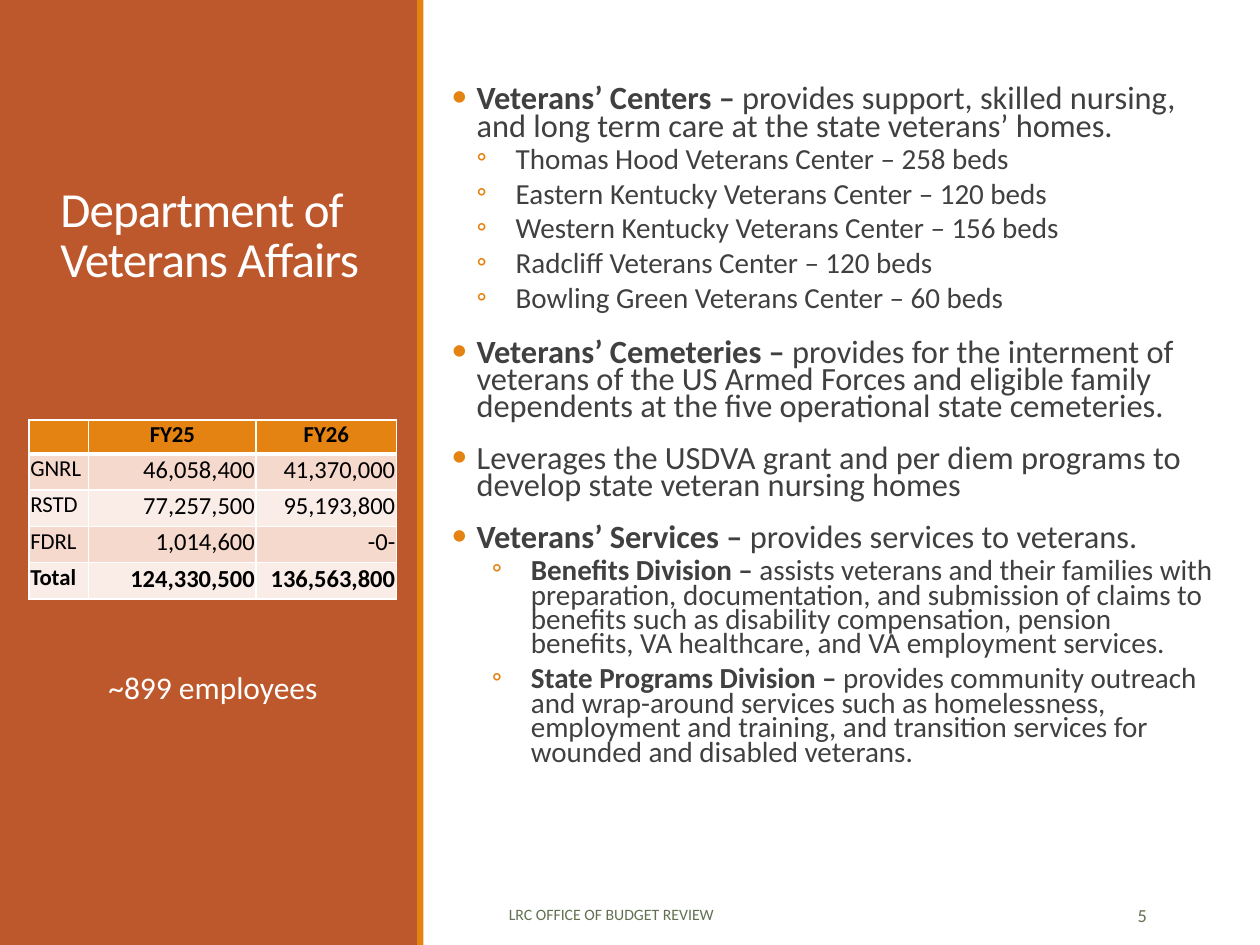
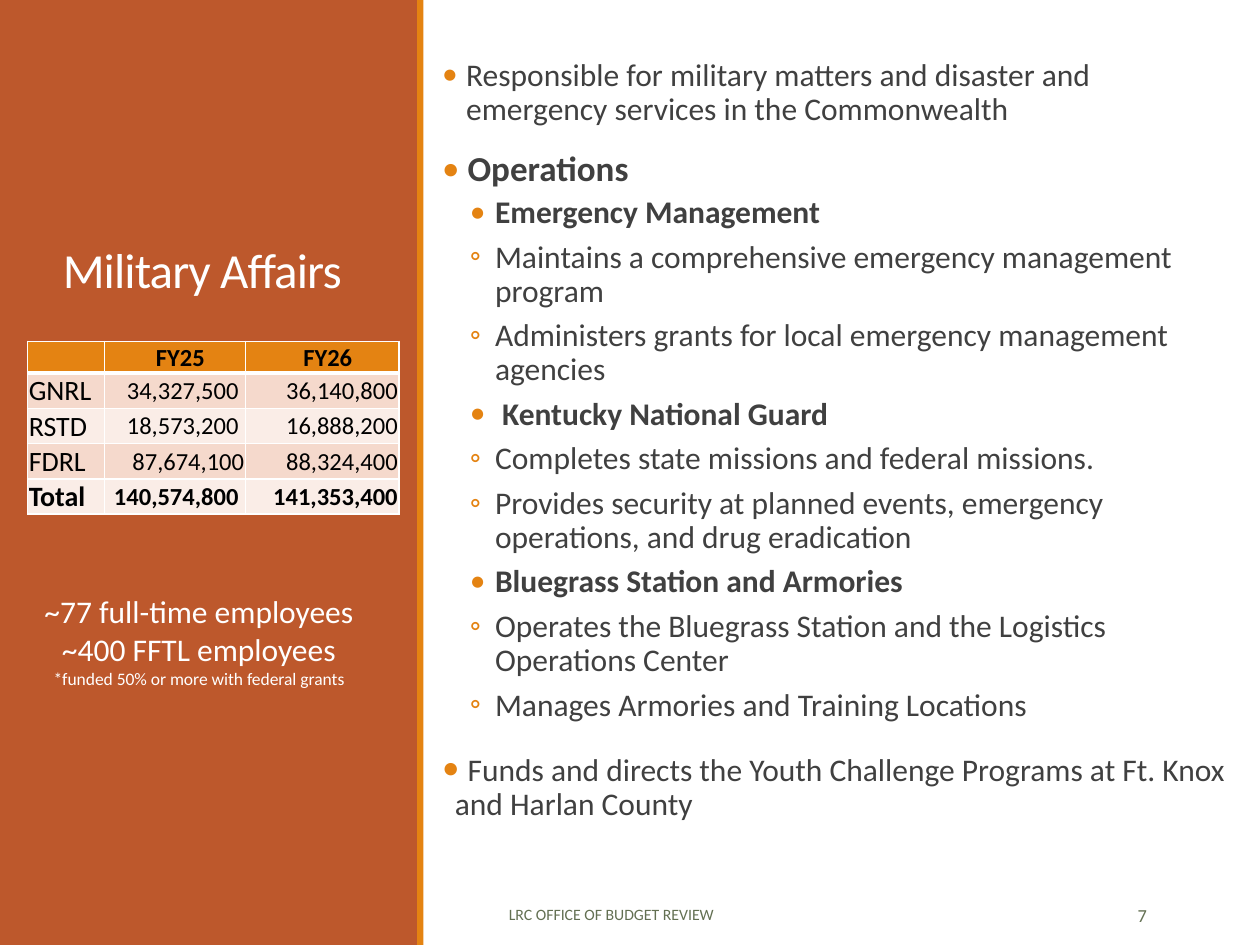
from dataclasses import dataclass

from lxml.etree import SubElement
from pptx import Presentation
from pptx.dml.color import RGBColor
from pptx.enum.shapes import MSO_SHAPE as Shape
from pptx.enum.text import MSO_ANCHOR as Anchor, PP_ALIGN as Align
from pptx.oxml import parse_xml
from pptx.oxml.ns import nsdecls, qn
from pptx.util import Pt

COLORS = {
    "panel": "BD582C", "accent": "E48312", "white": "FFFFFF", "black": "000000",
    "body": "404040", "footer": "637052", "odd row": "F5D9CC", "even row": "FAEDE7",
}
FONT = "Calibri"
FOOTER = "LRC OFFICE OF BUDGET REVIEW"


@dataclass
class Bullet:
    """Paragraph style; the bold lead may have its own size."""
    size: float
    left: float
    hang: float
    mark: str = "◦"
    level: int = 1
    before: float = 2
    after: float = 4
    lead_size: float = 0


def top_bullet(size, indent, lead_size=0):
    return Bullet(size, indent, indent, "•", 0, 12, 2, lead_size)


def rgb(name):
    return RGBColor.from_string(COLORS[name])


def write(para, text, size, color="white", bold=False, tracking=0):
    span = para.add_run()
    span.text = text
    span.font.name = FONT
    span.font.size = Pt(size)
    span.font.bold = bold
    span.font.color.rgb = rgb(color)
    if tracking:
        span._r.get_or_add_rPr().set("spc", str(int(tracking * 100)))


def set_bullet(para, bullet):
    props = para._p.get_or_add_pPr()
    props.set("marL", str(Pt(bullet.left)))
    props.set("indent", str(-Pt(bullet.hang)))
    color = SubElement(props, qn("a:buClr"))
    SubElement(color, qn("a:srgbClr"), val=COLORS["accent"])
    SubElement(props, qn("a:buFont"), typeface=FONT)
    SubElement(props, qn("a:buChar"), char=bullet.mark)


def set_borders(cell, top=1, bottom=1):
    props = cell._tc.get_or_add_tcPr()
    sides = {"lnL": 1, "lnR": 1, "lnT": top, "lnB": bottom}
    for place, (side, width) in enumerate(sides.items()):
        props.insert(place, parse_xml(
            f'<a:{side} {nsdecls("a")} w="{Pt(width)}"><a:solidFill>'
            f'<a:srgbClr val="{COLORS["white"]}"/></a:solidFill></a:{side}>'))


class BudgetDeck:
    def __init__(self):
        self.deck = Presentation()
        self.deck.slide_width, self.deck.slide_height = Pt(720), Pt(540)
        self.page = None

    def new_page(self, number):
        """Start a slide with the side panel, footer and slide number."""
        self.page = self.deck.slides.add_slide(self.deck.slide_layouts[6])
        self.band(0, 239, "panel")
        self.band(238.3, 3.7, "accent")
        for text, left, width, size, align in (
                (FOOTER, 283.7, 274.3, 9, Align.LEFT),
                (str(number), 584.6, 77.8, 10.5, Align.RIGHT)):
            frame = self.text_frame(left, 508.3, width, 28.8, Anchor.MIDDLE)
            para = frame.paragraphs[0]
            para.alignment = align
            write(para, text, size, "footer")

    def band(self, left, width, color):
        bar = self.page.shapes.add_shape(
            Shape.RECTANGLE, Pt(left), 0, Pt(width), self.deck.slide_height)
        bar.shadow.inherit = False
        bar.fill.solid()
        bar.fill.fore_color.rgb = rgb(color)
        bar.line.fill.background()

    def text_frame(self, left, top, width, height, anchor=Anchor.TOP):
        box = self.page.shapes.add_textbox(Pt(left), Pt(top), Pt(width), Pt(height))
        frame = box.text_frame
        frame.word_wrap = True
        frame.vertical_anchor = anchor
        return frame

    def title(self, text, left, height):
        frame = self.text_frame(left, 46.8, 188.6, height, Anchor.BOTTOM)
        para = frame.paragraphs[0]
        para.line_spacing = 0.85
        write(para, text, 28, tracking=-0.5)

    def staff_note(self, lines, left, top, width, height):
        frame = self.text_frame(left, top, width, height)
        for index, (text, size) in enumerate(lines):
            para = frame.add_paragraph() if index else frame.paragraphs[0]
            para.alignment = Align.CENTER
            write(para, text, size)

    def bullets(self, items, left, top, width, height, spacing):
        """Each item is (style, bold lead, plain rest)."""
        frame = self.text_frame(left, top, width, height)
        frame.margin_left = frame.margin_right = 0
        for index, (style, lead, rest) in enumerate(items):
            para = frame.add_paragraph() if index else frame.paragraphs[0]
            para.level = style.level
            para.line_spacing = spacing
            para.space_before, para.space_after = Pt(style.before), Pt(style.after)
            set_bullet(para, style)
            if lead:
                write(para, lead, style.lead_size or style.size, "body",
                      bold=bool(lead.strip()))
            if rest:
                write(para, rest, style.size, "body")

    def budget_table(self, rows, left, top, widths, heights, header_size,
                     label_size, anchor, header_shift=0):
        head_height, row_height = heights
        table = self.page.shapes.add_table(
            len(rows) + 1, len(widths), Pt(left), Pt(top), Pt(sum(widths)),
            Pt(head_height + row_height * len(rows))).table
        table.first_row = table.horz_banding = False
        for column, width in zip(table.columns, widths):
            column.width = Pt(width)
        for r, values in enumerate([("", "FY25", "FY26"), *rows]):
            header = r == 0
            table.rows[r].height = Pt(head_height if header else row_height)
            fill = "accent" if header else "odd row" if r % 2 else "even row"
            for c, text in enumerate(values):
                cell = table.cell(r, c)
                cell.margin_left = Pt(0.7 + header_shift * header)
                cell.margin_right = cell.margin_top = Pt(0.7)
                cell.margin_bottom = 0
                cell.vertical_anchor = anchor
                cell.fill.solid()
                cell.fill.fore_color.rgb = rgb(fill)
                set_borders(cell, top=3 if r == 1 else 1, bottom=3 if header else 1)
                size = header_size if header else 14 if c else label_size
                para = cell.text_frame.paragraphs[0]
                if not text:
                    SubElement(para._p, qn("a:endParaRPr"), sz=str(size * 100))
                    continue
                para.alignment = (Align.CENTER if header
                                  else Align.RIGHT if c else Align.LEFT)
                write(para, text, size, "black", bold=header or r == len(rows))


def veterans_page(deck):
    deck.new_page(5)
    deck.title("Department of Veterans Affairs", 27.4, 121)
    main = top_bullet(18.5, 14.4)
    center = Bullet(16.6, 36.7, 22.3, level=2)
    division = Bullet(16.6, 45.4, 22.3)
    centers = {"Thomas Hood": 258, "Eastern Kentucky": 120, "Western Kentucky": 156,
               "Radcliff": 120, "Bowling Green": 60}
    deck.bullets([
        (main, "Veterans’ Centers – ", "provides support, skilled nursing, and long "
         "term care at the state veterans’ homes."),
        *((center, "", f"{name} Veterans Center – {beds} beds")
          for name, beds in centers.items()),
        (main, "Veterans’ Cemeteries – ", "provides for the interment of veterans of "
         "the US Armed Forces and eligible family dependents at the five operational "
         "state cemeteries."),
        (main, "", "Leverages the USDVA grant and per diem programs to develop state "
         "veteran nursing homes"),
        (main, "Veterans’ Services – ", "provides services to veterans."),
        (division, "Benefits Division – ", "assists veterans and their families with "
         "preparation, documentation, and submission of claims to benefits such as "
         "disability compensation, pension benefits, VA healthcare, and VA employment "
         "services."),
        (division, "State Programs Division – ", "provides community outreach and "
         "wrap-around services such as homelessness, employment and training, and "
         "transition services for wounded and disabled veterans."),
    ], 258, 46.8, 434.9, 427, 0.7)
    deck.budget_table([
        ("GNRL", "46,058,400", "41,370,000"),
        ("RSTD", "77,257,500", "95,193,800"),
        ("FDRL", "1,014,600", "-0-"),
        ("Total", "124,330,500", "136,563,800"),
    ], 16.6, 240, (34, 95.8, 80.2), (19.4, 20.7), 13, 13, Anchor.TOP)
    deck.staff_note([("~899 employees", 18)], 27.4, 378, 188.6, 28.8)


def military_page(deck):
    deck.new_page(7)
    deck.title("Military Affairs", 28.8, 127.4)
    mission = top_bullet(18, 13.7)
    heading = top_bullet(18, 7.2, lead_size=20)
    agency = Bullet(18, 30.2, 14.4, mark="•")
    duty = Bullet(18, 30.2, 14.4)
    deck.bullets([
        (mission, "", "Responsible for military matters and disaster and emergency "
         "services in the Commonwealth"),
        (heading, " Operations", ""),
        (agency, "Emergency Management", ""),
        (duty, "", "Maintains a comprehensive emergency management program"),
        (duty, "", "Administers grants for local emergency management agencies"),
        (agency, " Kentucky National Guard", ""),
        (duty, "", "Completes state missions and federal missions."),
        (duty, "", "Provides security at planned events, emergency operations, and "
         "drug eradication"),
        (agency, "Bluegrass Station and Armories", ""),
        (duty, "", "Operates the Bluegrass Station and the Logistics Operations Center"),
        (duty, "", "Manages Armories and Training Locations"),
        (heading, " ", "Funds and directs the Youth Challenge Programs at Ft. Knox and "
         "Harlan County"),
    ], 252.7, 30.2, 450, 460, 0.9)
    deck.budget_table([
        ("GNRL", "34,327,500 ", "36,140,800"),
        ("RSTD", "18,573,200 ", "16,888,200"),
        ("FDRL", "87,674,100", "88,324,400"),
        ("Total", "140,574,800 ", "141,353,400"),
    ], 15.8, 195.1, (43.9, 80.6, 87.8), (18, 20.2), 14, 16, Anchor.MIDDLE,
        header_shift=6.3)
    deck.staff_note([
        ("~77 full-time employees", 18),
        ("~400 FFTL employees", 18),
        ("*funded 50% or more with federal grants", 10),
    ], 8.6, 334.8, 210.2, 63.4)


def main():
    budget = BudgetDeck()
    veterans_page(budget)
    military_page(budget)
    budget.deck.save("out.pptx")


if __name__ == "__main__":
    main()
